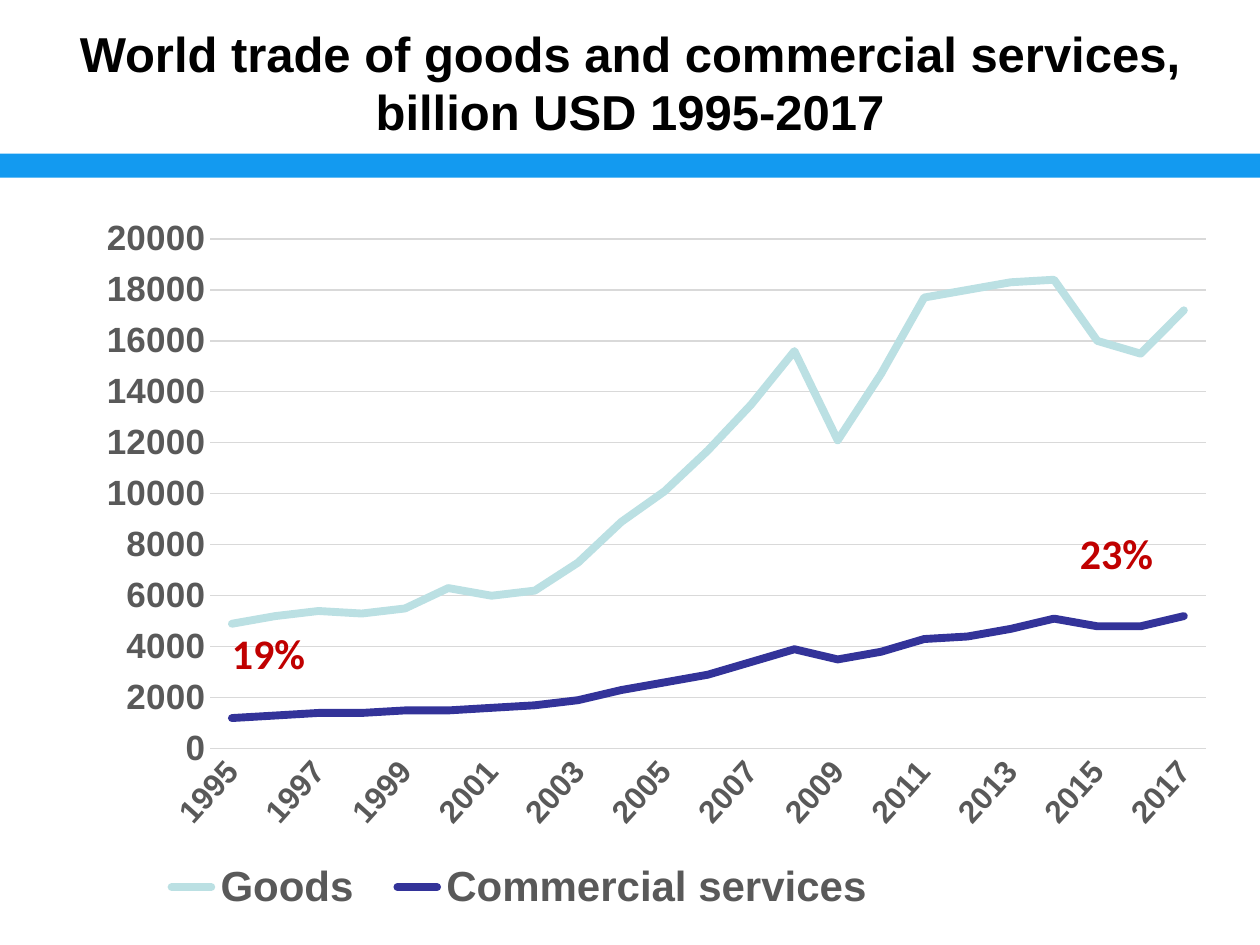
import pptx
import pptx.chart.data
import pptx.dml.color
import pptx.enum.chart
import pptx.enum.shapes
import pptx.enum.text
import pptx.oxml
import pptx.oxml.ns
import pptx.util

Inches = pptx.util.Inches
Pt = pptx.util.Pt
RGBColor = pptx.dml.color.RGBColor
qn = pptx.oxml.ns.qn

BLACK = RGBColor(0x00, 0x00, 0x00)
BLUE = RGBColor(0x13, 0x9A, 0xF0)
GREY = RGBColor(0x59, 0x59, 0x59)
RULE = RGBColor(0xD9, 0xD9, 0xD9)
RED = RGBColor(0xC0, 0x00, 0x00)
AQUA = RGBColor(0xBB, 0xE0, 0xE3)
NAVY = RGBColor(0x33, 0x33, 0x99)

YEARS = [str(year) for year in range(1995, 2018)]
TRADE = [
    ("Goods", AQUA, [
        4900, 5200, 5400, 5300, 5500, 6300, 6000, 6200, 7300, 8900, 10100, 11700,
        13500, 15600, 12100, 14700, 17700, 18000, 18300, 18400, 16000, 15500, 17200]),
    ("Commercial services", NAVY, [
        1200, 1300, 1400, 1400, 1500, 1500, 1600, 1700, 1900, 2300, 2600, 2900,
        3400, 3900, 3500, 3800, 4300, 4400, 4700, 5100, 4800, 4800, 5200]),
]
SHARES = [("23%", 8.19, 4.14), ("19%", 1.46, 4.93)]


class Deck:
    def __init__(self, face="Arial"):
        self.face = face
        self.prs = pptx.Presentation()
        self.prs.slide_width = Inches(10)
        self.prs.slide_height = Inches(7.5)
        self.slide = self.prs.slides.add_slide(self.prs.slide_layouts[5])

    def font(self, font, size, color, face=None, bold=True):
        font.name = face or self.face
        font.size = Pt(size)
        font.bold = bold
        font.color.rgb = color

    def fill_text(self, frame, text, size, color, face=None):
        frame.word_wrap = True
        para = frame.paragraphs[0]
        para.alignment = pptx.enum.text.PP_ALIGN.CENTER
        run = para.add_run()
        run.text = text
        self.font(run.font, size, color, face)

    def title(self, text, x, y, w, h):
        shape = self.slide.shapes.title
        shape.left, shape.top = Inches(x), Inches(y)
        shape.width, shape.height = Inches(w), Inches(h)
        frame = shape.text_frame
        frame.auto_size = pptx.enum.text.MSO_AUTO_SIZE.NONE
        frame.vertical_anchor = pptx.enum.text.MSO_ANCHOR.MIDDLE
        self.fill_text(frame, text, 28, BLACK)

    def band(self, x, y, w, h, color):
        shape = self.slide.shapes.add_shape(
            pptx.enum.shapes.MSO_SHAPE.RECTANGLE,
            Inches(x), Inches(y), Inches(w), Inches(h))
        shape.shadow.inherit = False
        shape.fill.solid()
        shape.fill.fore_color.rgb = color
        shape.line.fill.background()

    def label(self, text, x, y, w, h):
        box = self.slide.shapes.add_textbox(Inches(x), Inches(y), Inches(w), Inches(h))
        self.fill_text(box.text_frame, text, 24, RED, "Calibri")

    def place(self, parent, index, x, y, w, h, inner=False):
        old = parent.find(qn("c:layout"))
        if old is not None:
            parent.remove(old)
        target = '<c:layoutTarget val="inner"/>' if inner else ""
        sizes = "".join(f'<c:{key} val="{val}"/>' for key, val in zip("xywh", (x, y, w, h)))
        parent.insert(index, pptx.oxml.parse_xml(
            f'<c:layout {pptx.oxml.ns.nsdecls("c")}><c:manualLayout>{target}'
            f'<c:xMode val="edge"/><c:yMode val="edge"/>{sizes}'
            '</c:manualLayout></c:layout>'))

    def rule(self, line, color, width):
        line.color.rgb = color
        line.width = Pt(width)

    def axis(self, axis, size):
        axis.major_tick_mark = axis.minor_tick_mark = pptx.enum.chart.XL_TICK_MARK.NONE
        self.font(axis.tick_labels.font, size, GREY)

    def chart(self, cats, rows, x, y, w, h):
        data = pptx.chart.data.CategoryChartData()
        data.categories = cats
        for name, _, vals in rows:
            data.add_series(name, vals)
        chart = self.slide.shapes.add_chart(
            pptx.enum.chart.XL_CHART_TYPE.LINE,
            Inches(x), Inches(y), Inches(w), Inches(h), data).chart
        self.font(chart.font, 10, BLACK, bold=False)
        chart.has_title = False

        plot = chart.plots[0]
        plot.vary_by_categories = False
        for series, (_, color, _) in zip(plot.series, rows):
            series.smooth = False
            series.marker.style = pptx.enum.chart.XL_MARKER_STYLE.NONE
            self.rule(series.format.line, color, 4.5)
            series._element.find(qn("c:spPr")).find(qn("a:ln")).set("cap", "rnd")

        years = chart.category_axis
        self.axis(years, 18)
        self.rule(years.format.line, RULE, 0.75)
        root = years._element
        root.find(qn("c:txPr")).find(qn("a:bodyPr")).set("rot", str(-48 * 60000))
        root.find(qn("c:lblOffset")).addnext(pptx.oxml.parse_xml(
            f'<c:tickLblSkip {pptx.oxml.ns.nsdecls("c")} val="2"/>'))

        scale = chart.value_axis
        self.axis(scale, 20)
        scale.minimum_scale, scale.maximum_scale, scale.major_unit = 0, 20000, 2000
        scale.tick_labels.number_format = "General"
        scale.tick_labels.number_format_is_linked = False
        scale.format.line.fill.background()
        self.rule(scale.major_gridlines.format.line, RULE, 0.75)

        chart.has_legend = True
        legend = chart.legend
        legend.position = pptx.enum.chart.XL_LEGEND_POSITION.BOTTOM
        legend.include_in_layout = False
        self.font(legend.font, 24, GREY)
        self.place(legend._element, 1, 0.05, 0.9, 0.66, 0.1)
        area = root.getparent()
        self.place(area, 0, 0.11, 0.06, 0.87, 0.7, inner=True)


def main():
    deck = Deck()
    deck.band(0, 1.22, 10, 0.19, BLUE)
    deck.title("World trade of goods and commercial services, billion USD 1995-2017",
               0.5, 0.3, 9, 0.7)
    deck.chart(YEARS, TRADE, 0.67, 1.55, 9.08, 5.78)
    for text, x, y in SHARES:
        deck.label(text, x, y, 1.34, 0.51)
    deck.prs.save("out.pptx")


if __name__ == "__main__":
    main()
